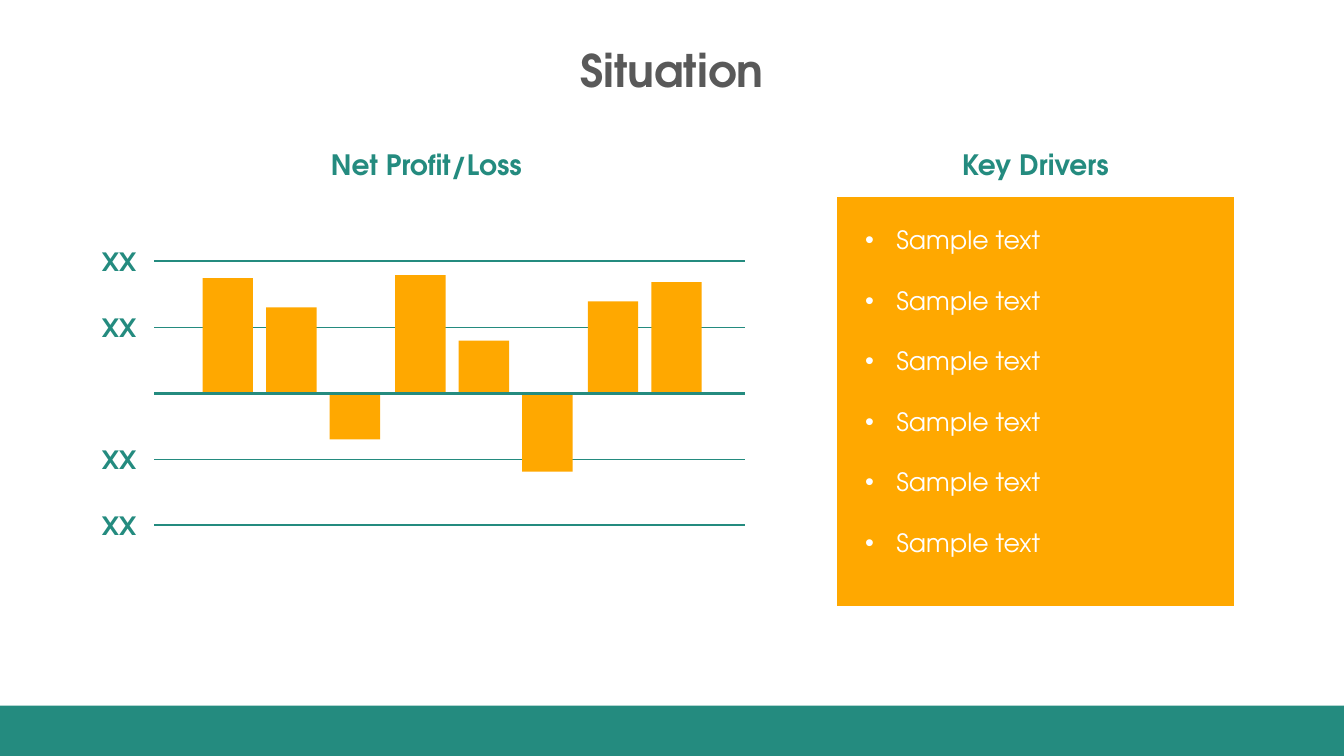
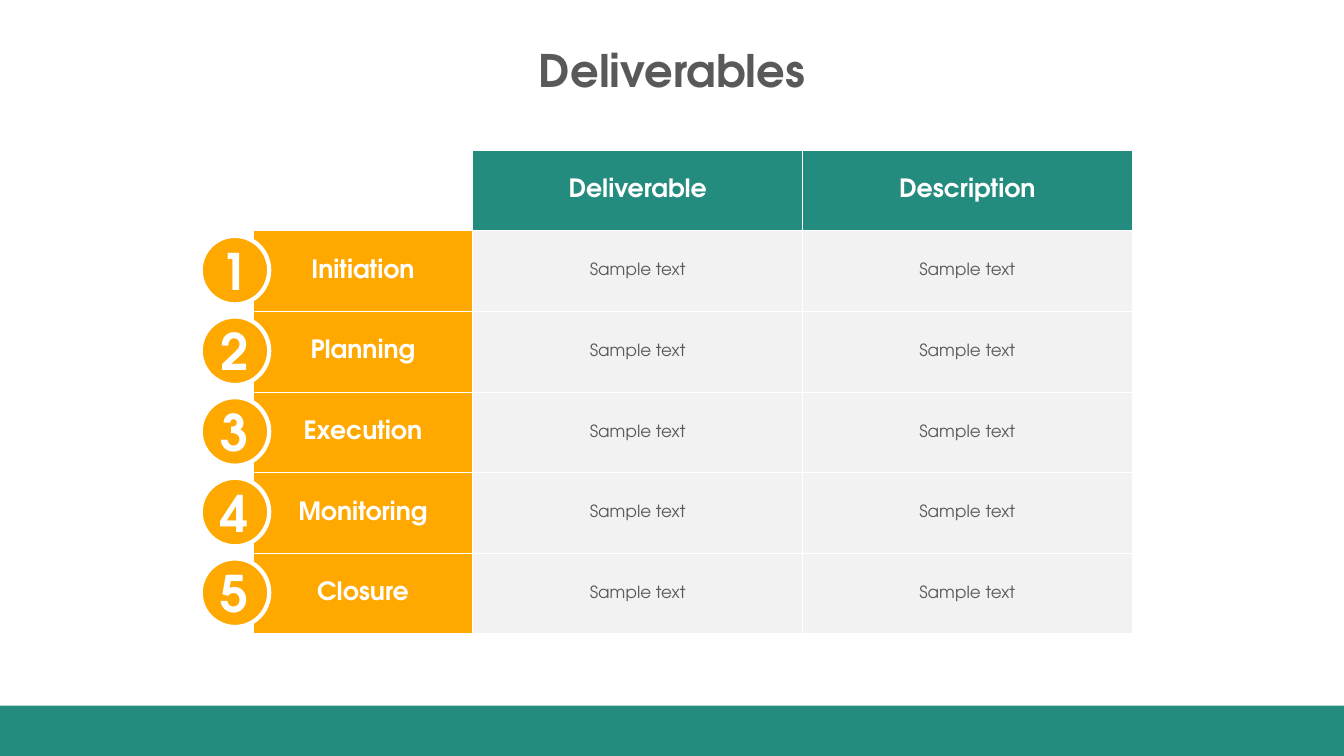
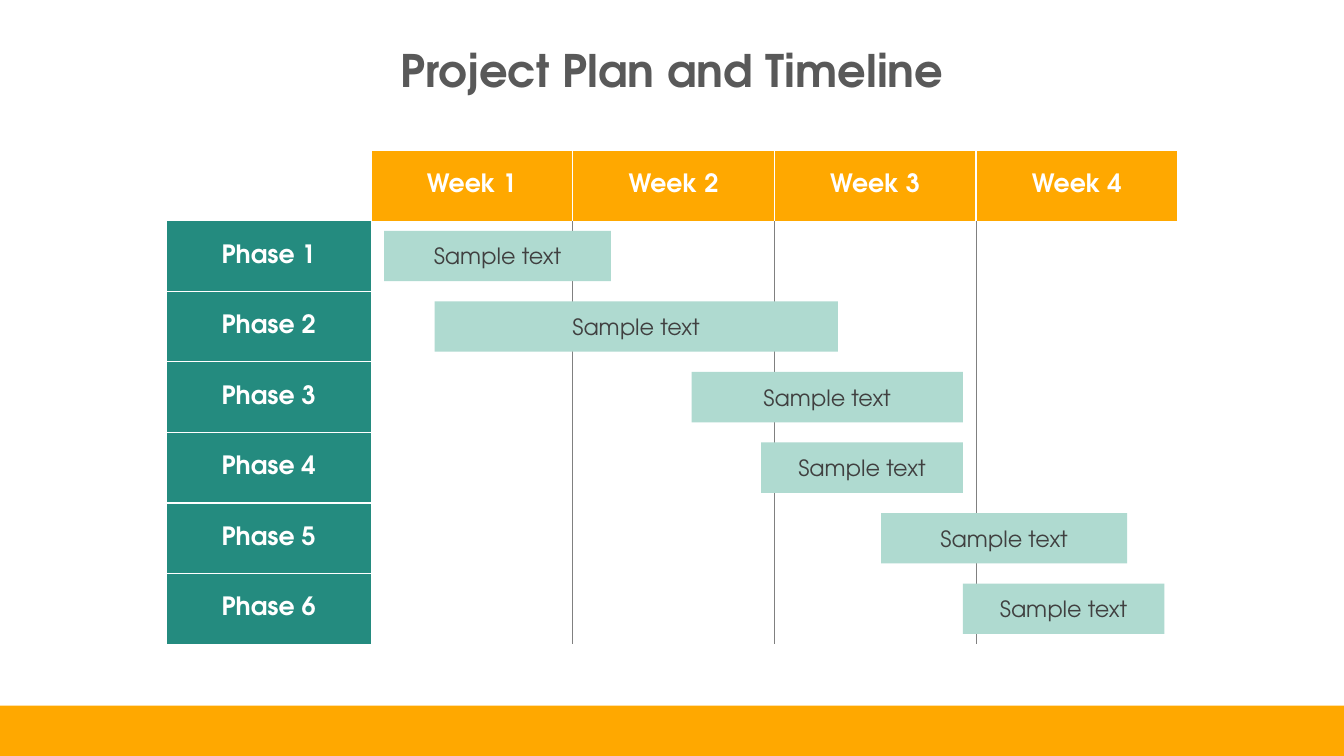
from pptx import Presentation
from pptx.dml.color import RGBColor
from pptx.enum.shapes import MSO_CONNECTOR as Line, MSO_SHAPE as Kind
from pptx.enum.text import MSO_ANCHOR as Anchor, MSO_AUTO_SIZE as Auto, PP_ALIGN as Align
from pptx.oxml.ns import qn
from pptx.util import Inches, Pt
from lxml.etree import SubElement as Sub

FONT = "TeX Gyre Adventor"
TEAL, GOLD, MINT = "248B7F", "FFA800", "AFDAD0"
WHITE, PALE, GRAY, DARK, INK = "FFFFFF", "F2F2F2", "808080", "595959", "404040"
PLAIN = "{2D5ABB26-0587-4C30-8999-92F81FD0307C}"
SAMPLE = "Sample text"

HEADS = [("Net Profit/Loss", 2.81), ("Key Drivers", 8.85)]
DRIVERS = [SAMPLE] * 6
PROFITS = [1.14, 0.85, -0.46, 1.17, 0.52, -0.78, 0.91, 1.1]
LEVELS = [2.59, 3.25, 4.56, 5.21]
STAGES = ["Initiation", "Planning", "Execution", "Monitoring", "Closure"]
GOODS = [["", "Deliverable", "Description"]] + [[s, SAMPLE, SAMPLE] for s in STAGES]
WEEKS = ["Week 1", "Week 2", "Week 3", "Week 4"]
PHASES = ["Phase 1", "Phase 2", "Phase 3", "Phase 4", "Phase 5", "Phase 6"]
PLAN = [[""] + WEEKS] + [[p] + [""] * len(WEEKS) for p in PHASES]
TASKS = [(3.81, 2.25), (4.31, 4), (6.86, 2.69), (7.55, 2), (8.74, 2.44), (9.55, 2)]


def color(code):
    return RGBColor.from_string(code)


def place(shape, *box):
    shape.left, shape.top, shape.width, shape.height = map(Inches, box)


def style(par, size, code, bold=False, align=Align.CENTER):
    par.alignment = align
    font = par.font
    font.name, font.size, font.bold = FONT, Pt(size), bold
    font.color.rgb = color(code)


def draw(slide, kind, box, fill, edge=None):
    shape = slide.shapes.add_shape(kind, *map(Inches, box))
    shape.shadow.inherit = False
    shape.fill.solid()
    shape.fill.fore_color.rgb = color(fill)
    outline(shape, edge)
    return shape


def outline(shape, edge):
    if edge:
        shape.line.color.rgb = color(edge)
        shape.line.width = Pt(3)
    else:
        shape.line.fill.background()


def write(shape, text, *look):
    frame = shape.text_frame
    frame.text = text
    style(frame.paragraphs[0], *look)
    return frame


def label(slide, text, box, *look):
    shape = slide.shapes.add_textbox(*map(Inches, box))
    write(shape, text, *look).word_wrap = True


def rule(slide, y, width):
    line = slide.shapes.add_connector(
        Line.STRAIGHT, Inches(1.53), Inches(y), Inches(7.39), Inches(y))
    line.line.color.rgb = color(TEAL)
    line.line.width = Pt(width)
    Sub(line._element.spPr, qn("a:effectLst"))


def start(deck, layout, title, band):
    slide = deck.slides.add_slide(deck.slide_layouts[layout])
    place(slide.shapes.title, 3.12, 0.37, 7.09, 0.64)
    frame = write(slide.shapes.title, title, 32, DARK, True)
    frame.vertical_anchor = Anchor.MIDDLE
    frame.auto_size = Auto.NONE
    draw(slide, Kind.RECTANGLE, (0, 7, 13.33, 0.5), band)
    return slide


def border(cell, sides, code, width):
    props = cell._tc.get_or_add_tcPr()
    for side in "LRTB":
        if side in sides:
            line = Sub(props, qn("a:ln" + side), w=str(Pt(width)))
            Sub(Sub(line, qn("a:solidFill")), qn("a:srgbClr"), val=code)


def grid(slide, rows, left, top, widths, high, look):
    size = sum(widths), high * len(rows)
    table = slide.shapes.add_table(
        len(rows), len(widths), *map(Inches, (left, top, *size))).table
    table._tbl.tblPr.find(qn("a:tableStyleId")).text = PLAIN
    table.first_row = table.horz_banding = False
    for col, width in zip(table.columns, widths):
        col.width = Inches(width)
    for r, row in enumerate(rows):
        table.rows[r].height = Inches(high)
        for c, text in enumerate(row):
            cell = table.cell(r, c)
            fill, font, edge = look(r, c)
            border(cell, *edge)
            if fill:
                cell.fill.solid()
                cell.fill.fore_color.rgb = color(fill)
            else:
                cell.fill.background()
            if text:
                cell.vertical_anchor = Anchor.MIDDLE
                write(cell, text, *font)


HEAD = (18, WHITE, True)


def goods(r, c):
    edge = ("LRTB", WHITE, 1)
    if r and c:
        return PALE, (12, DARK), edge
    return (TEAL if c else GOLD if r else None), HEAD, edge


def weeks(r, c):
    if r and c:
        sides = ("L" if c > 1 else "") + ("R" if c < len(WEEKS) else "")
        return None, HEAD, (sides, GRAY, 0.5)
    if r:
        return TEAL, HEAD, ("LTB", WHITE, 1)
    return (GOLD if c else None), HEAD, ("LRT" if c else "LRTB", WHITE, 1)


def situation(deck):
    slide = start(deck, 1, "Situation", TEAL)
    for text, x in HEADS:
        label(slide, text, (x, 1.41, 2.84, 0.44), 20, TEAL, True)

    body = slide.placeholders[1]
    place(body, 8.28, 1.93, 3.98, 4.1)
    body.fill.solid()
    body.fill.fore_color.rgb = color(GOLD)
    outline(body, WHITE)
    frame = body.text_frame
    frame.auto_size = Auto.NONE
    frame.vertical_anchor = Anchor.TOP
    frame.margin_left = frame.margin_right = Inches(0.3)
    frame.margin_top = frame.margin_bottom = Inches(0.3)
    frame.text = "\n".join(DRIVERS)
    for i, par in enumerate(frame.paragraphs):
        props = par._p.get_or_add_pPr()
        props.set("marL", str(Inches(0.31)))
        props.set("indent", str(-Inches(0.31)))
        Sub(props, qn("a:buFont"), typeface="Arial")
        Sub(props, qn("a:buChar"), char="•")
        par.space_before = Pt(21.6 if i else 0)
        style(par, 18, WHITE, False, Align.LEFT)

    for y in LEVELS:
        rule(slide, y, 1)
        label(slide, "XX", (0.85, y - 0.2, 0.6, 0.4), 18, TEAL, True, Align.RIGHT)
    base = 3.9
    for i, value in enumerate(PROFITS):
        x = 2.01 + 1.91 * (i // 3) + 0.63 * (i % 3)
        top = base - max(value, 0)
        draw(slide, Kind.RECTANGLE, (x, top, 0.5, abs(value)), GOLD)
    rule(slide, base, 2)


def deliver(deck):
    slide = start(deck, 5, "Deliverables", TEAL)
    top, high = 1.49, 0.8
    grid(slide, GOODS, 2.51, top, [2.18, 3.27, 3.27], high, goods)
    for i in range(1, len(STAGES) + 1):
        disc = draw(slide, Kind.OVAL, (1.99, top + high * i + 0.05, 0.68, 0.68),
                    GOLD, WHITE)
        frame = write(disc, str(i), 36, WHITE, True)
        frame.vertical_anchor = Anchor.MIDDLE
        frame.word_wrap = False
        frame.margin_left = frame.margin_right = 0
        frame.margin_top = frame.margin_bottom = 0


def timeline(deck):
    slide = start(deck, 5, "Project Plan and Timeline", GOLD)
    top, high = 1.49, 0.7
    grid(slide, PLAN, 1.65, top, [2.03] + [2] * len(WEEKS), high, weeks)
    for i, (x, width) in enumerate(TASKS, 1):
        bar = draw(slide, Kind.RECTANGLE, (x, top + high * i + 0.1, width, 0.5), MINT)
        write(bar, SAMPLE, 16, INK).vertical_anchor = Anchor.MIDDLE


def main():
    deck = Presentation()
    deck.slide_width, deck.slide_height = Inches(13.33), Inches(7.5)
    situation(deck)
    deliver(deck)
    timeline(deck)
    deck.save("out.pptx")


if __name__ == "__main__":
    main()
